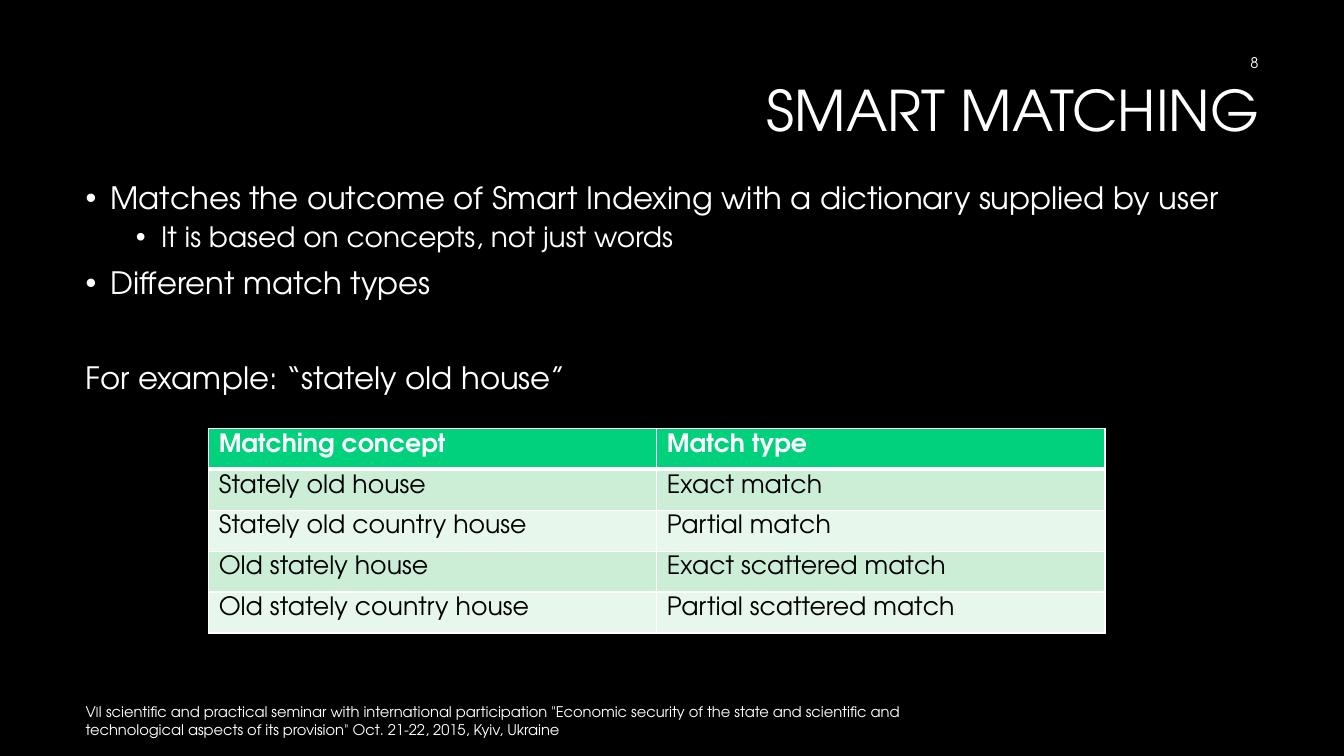
from lxml.etree import SubElement
from pptx import Presentation
from pptx.dml.color import RGBColor
from pptx.enum.text import MSO_ANCHOR, PP_ALIGN
from pptx.oxml.ns import qn
from pptx.util import Inches, Pt

FONT = "TeX Gyre Adventor"
WHITE, BLACK = "FFFFFF", "000000"
HEADER, BAND_DARK, BAND_LIGHT = "01D17D", "CCEED7", "E7F7EC"

# text, size, left margin of the bullet text (None: no bullet), space before
BODY = [
    ("Matches the outcome of Smart Indexing with a dictionary supplied by user", 22, 0.25, 0),
    ("It is based on concepts, not just words", 20, 0.75, 5),
    ("Different match types", 22, 0.25, 10),
    ("For example: “stately old house”", 22, None, 44),
]
MATCHES = [
    ("Matching concept", "Match type"),
    ("Stately old house", "Exact match"),
    ("Stately old country house", "Partial match"),
    ("Old stately house", "Exact scattered match"),
    ("Old stately country house", "Partial scattered match"),
]
FOOTER = ('VІI scientific and practical seminar with international participation '
          '"Economic security of the state and scientific and technological aspects '
          'of its provision" Oct. 21-22, 2015, Kyiv, Ukraine')


def color(hex_code):
    return RGBColor.from_string(hex_code)


def add_run(p, text, size, hex_code=WHITE, bold=False):
    r = p.add_run()
    r.text = text
    r.font.name = FONT
    r.font.size = Pt(size)
    r.font.bold = bold
    r.font.color.rgb = color(hex_code)


def add_text_frame(s, box, anchor):
    tf = s.shapes.add_textbox(*map(Inches, box)).text_frame
    tf.word_wrap = True
    tf.vertical_anchor = anchor
    return tf


def add_line(s, box, text, size, align=PP_ALIGN.LEFT, spacing=1.0):
    p = add_text_frame(s, box, MSO_ANCHOR.MIDDLE).paragraphs[0]
    p.alignment = align
    p.line_spacing = spacing
    add_run(p, text, size)


def add_body(s, box):
    tf = add_text_frame(s, box, MSO_ANCHOR.TOP)
    for i, (text, size, margin, before) in enumerate(BODY):
        p = tf.paragraphs[0] if i == 0 else tf.add_paragraph()
        p.line_spacing = 0.9
        p.space_before = Pt(before)
        if margin is not None:
            pPr = p._p.get_or_add_pPr()
            pPr.set("marL", str(Inches(margin)))
            pPr.set("indent", str(Inches(-0.25)))
            SubElement(pPr, qn("a:buFont"), typeface="Arial")
            SubElement(pPr, qn("a:buChar"), char="•")
        add_run(p, text, size)


def set_borders(cell, top, bottom):
    tcPr = cell._tc.get_or_add_tcPr()
    widths = {"a:lnL": 1, "a:lnR": 1, "a:lnT": top, "a:lnB": bottom}
    for i, (tag, width) in enumerate(widths.items()):
        ln = SubElement(tcPr, qn(tag), w=str(Pt(width)))
        SubElement(SubElement(ln, qn("a:solidFill")), qn("a:srgbClr"), val=WHITE)
        tcPr.insert(i, ln)  # borders come before the fill


def add_match_table(s, box):
    table = s.shapes.add_table(len(MATCHES), 2, *map(Inches, box)).table
    for i, row in enumerate(MATCHES):
        head = i == 0
        fill = HEADER if head else BAND_DARK if i % 2 else BAND_LIGHT
        for j, text in enumerate(row):
            cell = table.cell(i, j)
            cell.fill.solid()
            cell.fill.fore_color.rgb = color(fill)
            set_borders(cell, 3 if i == 1 else 1, 3 if head else 1)
            add_run(cell.text_frame.paragraphs[0], text, 18,
                    WHITE if head else BLACK, head)


def main():
    prs = Presentation()
    prs.slide_width, prs.slide_height = Inches(13.33), Inches(7.5)
    s = prs.slides.add_slide(prs.slide_layouts[6])
    s.background.fill.solid()
    s.background.fill.fore_color.rgb = color(BLACK)

    # Title
    add_line(s, (3.17, 0.53, 9.42, 1.18), "SMART MATCHING", 40, PP_ALIGN.RIGHT, 0.9)
    # Bullets and example
    add_body(s, (0.75, 1.77, 11.83, 2.43))
    # Match types
    add_match_table(s, (2.07, 4.25, 8.89, 2.03))
    # Footer and slide number
    add_line(s, (0.75, 6.95, 8.5, 0.4), FOOTER, 10.5)
    add_line(s, (9.58, 0.42, 3, 0.4), "8", 10.5, PP_ALIGN.RIGHT)

    prs.save("out.pptx")


if __name__ == "__main__":
    main()
